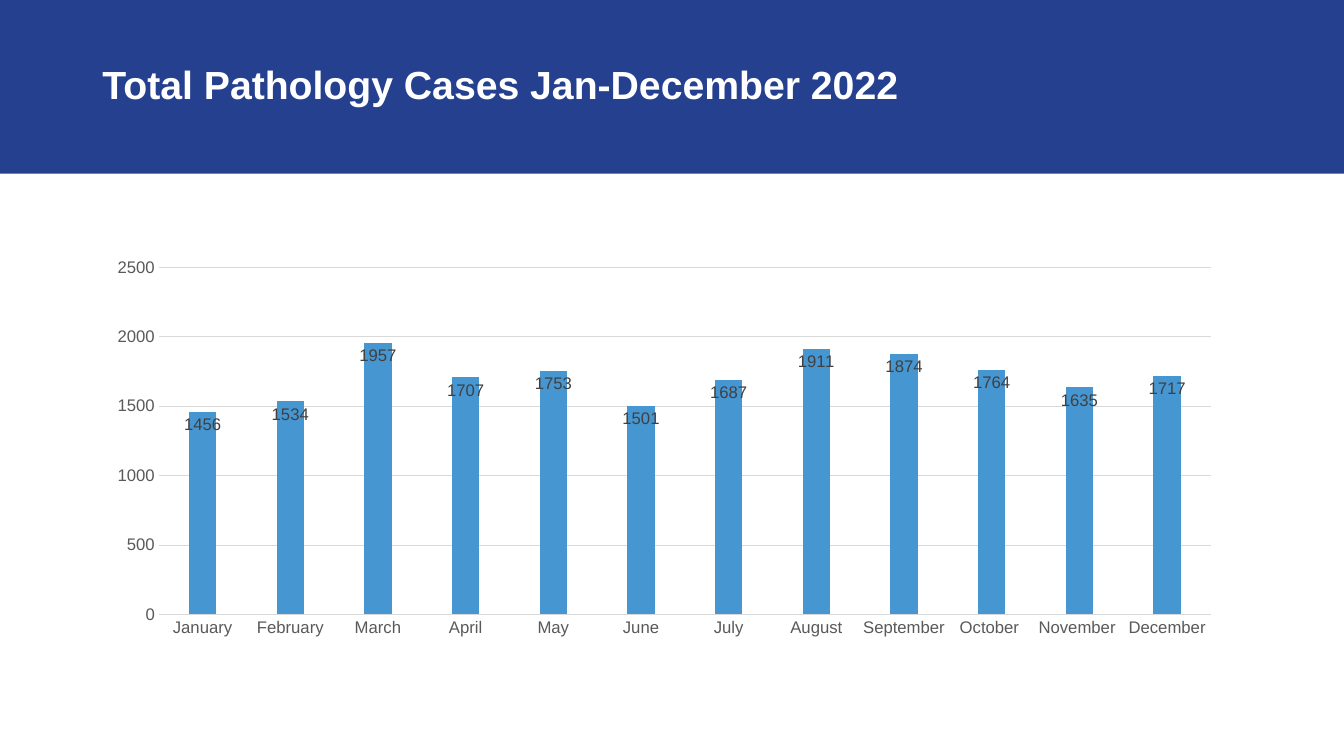
import pptx
import pptx.chart.data
import pptx.dml.color
import pptx.enum.chart
import pptx.enum.shapes
import pptx.enum.text
import pptx.oxml
import pptx.oxml.ns
import pptx.util

Pt = pptx.util.Pt
FONT = "Arial"
CASES = {
    "January": 1456, "February": 1534, "March": 1957, "April": 1707,
    "May": 1753, "June": 1501, "July": 1687, "August": 1911,
    "September": 1874, "October ": 1764, "November ": 1635, "December": 1717,
}
# Left, top, width and height in points; the plot is relative to the chart
CHART_BOX = (84, 182, 792, 293)
PLOT_BOX = (26, 9, 755, 248)


def color(value):
    return pptx.dml.color.RGBColor.from_string(value)


def style_font(font, size, value, bold=False):
    font.name = FONT
    font.size = Pt(size)
    font.bold = bold
    font.color.rgb = color(value)


def style_line(line, value):
    line.color.rgb = color(value)
    line.width = Pt(0.75)


def add_title(page, text):
    title = page.shapes.title
    title.left, title.top, title.width, title.height = map(Pt, (66, 10, 828, 104.5))
    frame = title.text_frame
    frame.text = text
    frame.word_wrap = True
    frame.auto_size = pptx.enum.text.MSO_AUTO_SIZE.NONE
    frame.vertical_anchor = pptx.enum.text.MSO_ANCHOR.MIDDLE
    para = frame.paragraphs[0]
    para.alignment = pptx.enum.text.PP_ALIGN.LEFT
    para.line_spacing = 0.9
    style_font(para.runs[0].font, 28, "FFFFFF", bold=True)


def add_header_band(page, width):
    band = page.shapes.add_shape(
        pptx.enum.shapes.MSO_SHAPE.RECTANGLE, 0, 0, width, Pt(124))
    band.shadow.inherit = False
    band.fill.solid()
    band.fill.fore_color.rgb = color("25408F")
    band.line.fill.background()
    # Place the band behind the title
    page.shapes.title.element.addprevious(band.element)


def set_plot_area(chart):
    namespace = pptx.oxml.ns.nsdecls("c")
    width, height = CHART_BOX[2:]
    fractions = [length / whole for length, whole
                 in zip(PLOT_BOX, (width, height, width, height))]
    settings = [("layoutTarget", "inner"), ("xMode", "edge"), ("yMode", "edge")]
    settings += zip("xywh", fractions)
    inner = "".join(f'<c:{name} val="{value}"/>' for name, value in settings)
    layout = pptx.oxml.parse_xml(
        f"<c:layout {namespace}><c:manualLayout>{inner}</c:manualLayout></c:layout>")
    plot_area = chart.plots[0]._element.getparent()
    for old_layout in plot_area.findall(pptx.oxml.ns.qn("c:layout")):
        plot_area.remove(old_layout)
    plot_area.insert(0, layout)


def style_axis(axis):
    axis.major_tick_mark = pptx.enum.chart.XL_TICK_MARK.NONE
    axis.minor_tick_mark = pptx.enum.chart.XL_TICK_MARK.NONE
    style_font(axis.tick_labels.font, 12, "595959")


def add_case_chart(page):
    data = pptx.chart.data.CategoryChartData()
    data.categories = list(CASES)
    data.add_series("Series 1", list(CASES.values()))
    chart = page.shapes.add_chart(
        pptx.enum.chart.XL_CHART_TYPE.COLUMN_CLUSTERED,
        *map(Pt, CHART_BOX), data).chart
    chart.has_title = False
    chart.has_legend = False
    style_font(chart.font, 10, "000000")

    # Axes and gridlines
    months, counts = chart.category_axis, chart.value_axis
    style_axis(months)
    style_axis(counts)
    style_line(months.format.line, "D9D9D9")
    counts.format.line.fill.background()
    counts.minimum_scale, counts.maximum_scale, counts.major_unit = 0, 2500, 500
    style_line(counts.major_gridlines.format.line, "D9D9D9")

    # Columns and their value labels
    plot = chart.plots[0]
    plot.gap_width = 219
    plot.overlap = -27
    plot.vary_by_categories = False
    series = plot.series[0]
    series.format.fill.solid()
    series.format.fill.fore_color.rgb = color("4696D2")
    labels = series.data_labels
    labels.show_value = True
    labels.position = pptx.enum.chart.XL_LABEL_POSITION.INSIDE_END
    style_font(labels.font, 12, "404040")
    set_plot_area(chart)


def main():
    deck = pptx.Presentation()
    deck.slide_width, deck.slide_height = Pt(960), Pt(540)
    page = deck.slides.add_slide(deck.slide_layouts.get_by_name("Title Only"))
    add_title(page, "Total Pathology Cases Jan-December 2022")
    add_header_band(page, deck.slide_width)
    add_case_chart(page)
    deck.save("out.pptx")


if __name__ == "__main__":
    main()
